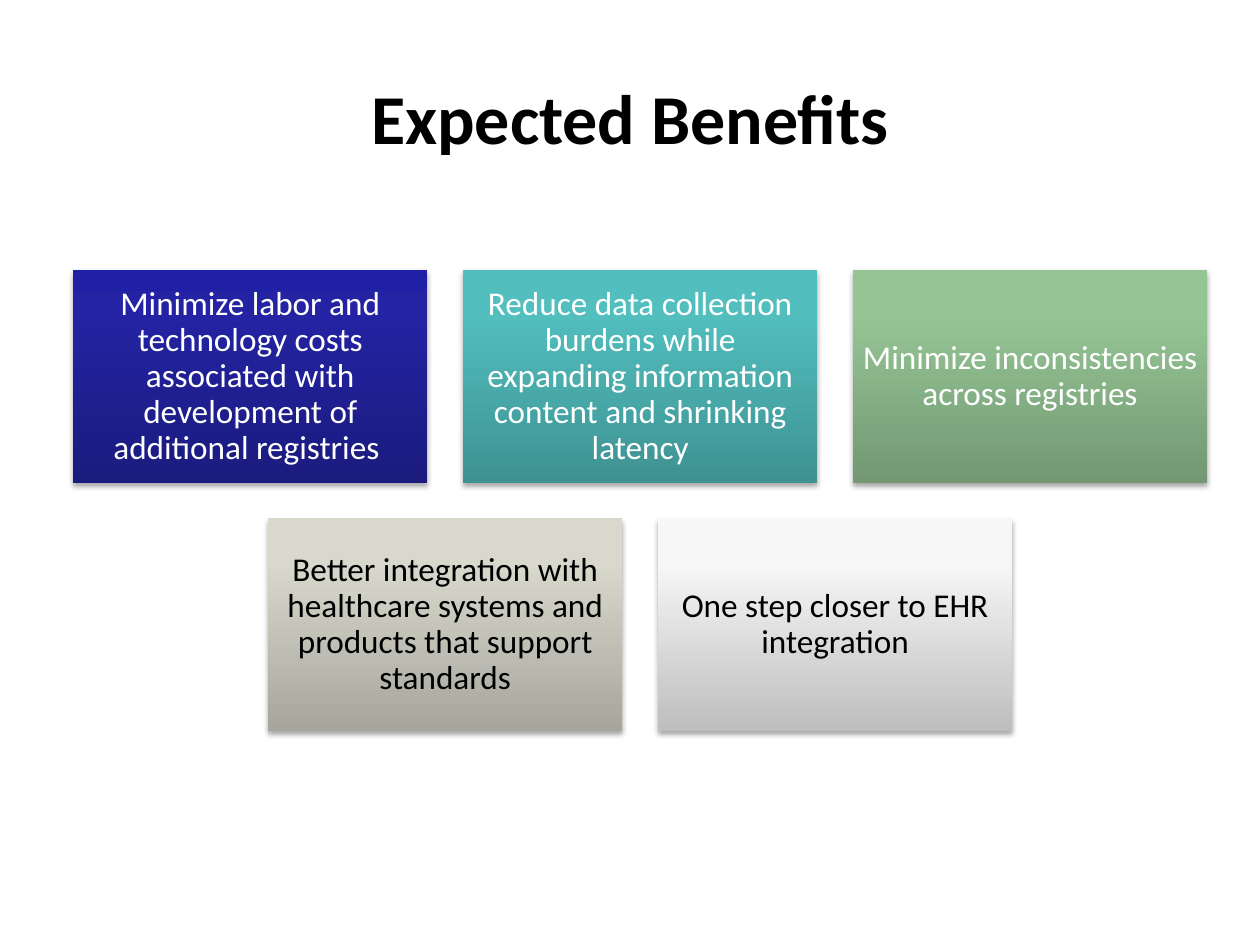
from dataclasses import dataclass

import pptx
import pptx.util
import pptx.dml.color
import pptx.enum.shapes
import pptx.enum.text
import pptx.oxml
import pptx.oxml.ns

Pt = pptx.util.Pt


@dataclass(frozen=True)
class Theme:
    font: str = "Calibri"
    title_size: int = 40
    card_size: int = 19
    black: str = "000000"
    white: str = "FFFFFF"
    # Gradient stops from the bottom edge to the top edge
    navy: tuple = ("1B1B7E", "2323A3", "2020A6")
    teal: tuple = ("3F9292", "52BEBE", "50C1C1")
    green: tuple = ("739873", "95C595", "95C795")
    sand: tuple = ("A6A69D", "D8D8CC", "D9D9CD")
    silver: tuple = ("BEBEBE", "F7F7F7", "F8F8F8")


theme = Theme()
namespace = pptx.oxml.ns.nsdecls("a")


def write_text(box, text, size, color, bold=False):
    """Put one centred paragraph in the middle of a box."""
    frame = box.text_frame
    frame.word_wrap = True
    frame.vertical_anchor = pptx.enum.text.MSO_ANCHOR.MIDDLE
    para = frame.paragraphs[0]
    para.alignment = pptx.enum.text.PP_ALIGN.CENTER
    span = para.add_run()
    span.text = text
    span.font.name = theme.font
    span.font.size = Pt(size)
    span.font.bold = bold
    span.font.color.rgb = pptx.dml.color.RGBColor.from_string(color)
    return para


def style_card(card, colors):
    """Give a card its vertical gradient and soft shadow, without outline."""
    stops = "".join(
        f'<a:gs pos="{position * 1000}"><a:srgbClr val="{color}"/></a:gs>'
        for position, color in zip((0, 80, 100), colors))
    gradient = pptx.oxml.parse_xml(
        f'<a:gradFill {namespace} rotWithShape="1"><a:gsLst>{stops}</a:gsLst>'
        '<a:lin ang="16200000" scaled="0"/></a:gradFill>')
    properties = card.element.spPr
    properties.find(pptx.oxml.ns.qn("a:prstGeom")).addnext(gradient)
    card.line.fill.background()
    card.shadow.inherit = False
    shadow = pptx.oxml.parse_xml(
        f'<a:outerShdw {namespace} blurRad="{Pt(3.1)}" dist="{Pt(1.8)}" '
        'dir="5400000" rotWithShape="0"><a:srgbClr val="000000">'
        '<a:alpha val="35000"/></a:srgbClr></a:outerShdw>')
    properties.find(pptx.oxml.ns.qn("a:effectLst")).append(shadow)


# Page
deck = pptx.Presentation()
deck.slide_width, deck.slide_height = Pt(720), Pt(540)
page = deck.slides.add_slide(deck.slide_layouts[6])

# Title
title = page.shapes.add_textbox(Pt(36), Pt(21.6), Pt(648), Pt(90))
write_text(title, "Expected Benefits", theme.title_size, theme.black, bold=True)

# Benefit cards, each row centred on the same axis
rows = [
    [("Minimize labor and technology costs associated with development of "
      "additional registries ", theme.navy, theme.white),
     ("Reduce data collection burdens while expanding information content "
      "and shrinking latency", theme.teal, theme.white),
     ("Minimize inconsistencies across registries", theme.green, theme.white)],
    [("Better integration with healthcare systems and products that support "
      "standards", theme.sand, theme.black),
     ("One step closer to EHR integration", theme.silver, theme.black)],
]
center, top = 365.8, 154.4
width, height, gap = 202.6, 121.6, 20.2

for row_index, row in enumerate(rows):
    row_width = len(row) * (width + gap) - gap
    for column, (text, colors, text_color) in enumerate(row):
        card = page.shapes.add_shape(
            pptx.enum.shapes.MSO_SHAPE.RECTANGLE,
            Pt(center - row_width / 2 + column * (width + gap)),
            Pt(top + row_index * (height + gap)), Pt(width), Pt(height))
        style_card(card, colors)
        frame = card.text_frame
        frame.margin_left = frame.margin_right = Pt(5.7)
        frame.margin_top = frame.margin_bottom = Pt(5.7)
        para = write_text(card, text, theme.card_size, text_color)
        para.line_spacing = 0.9

deck.save("out.pptx")
